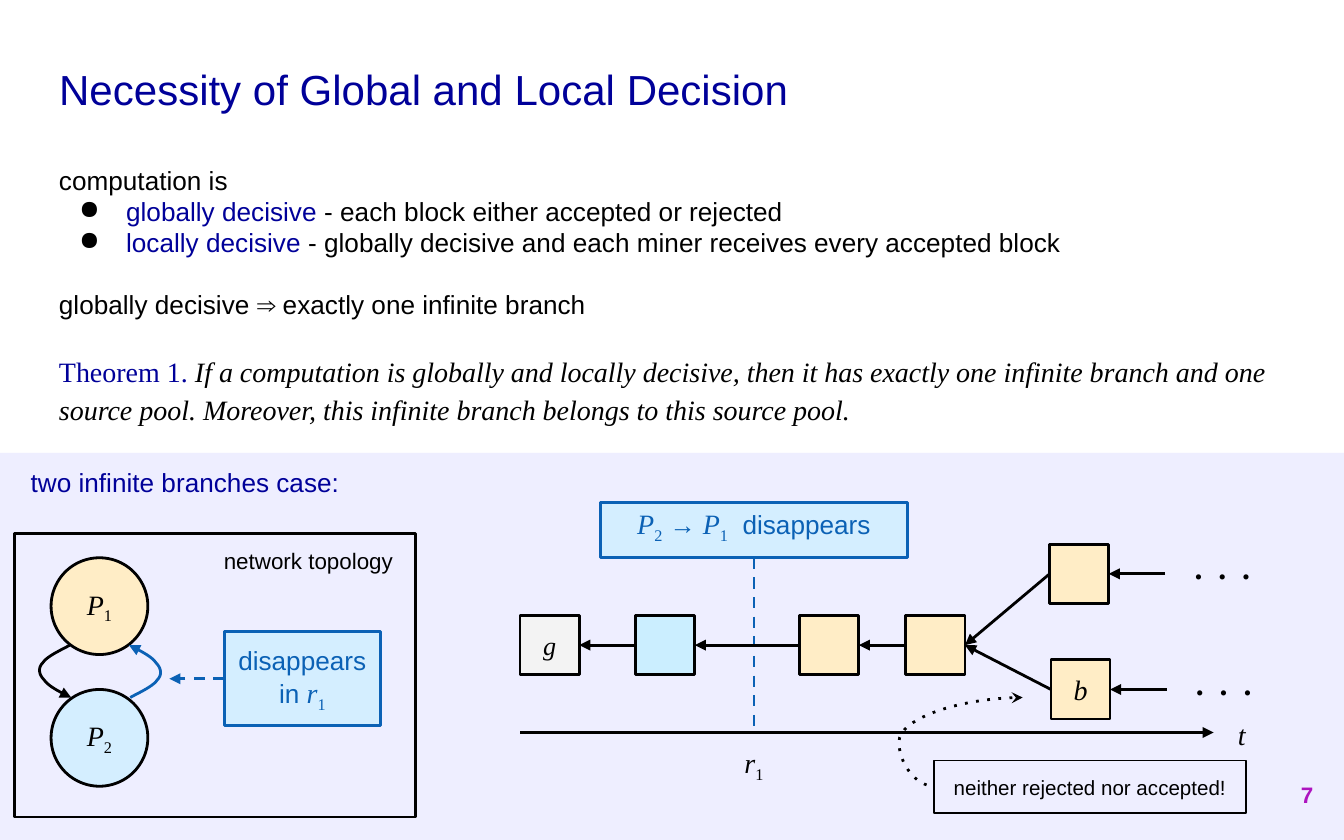
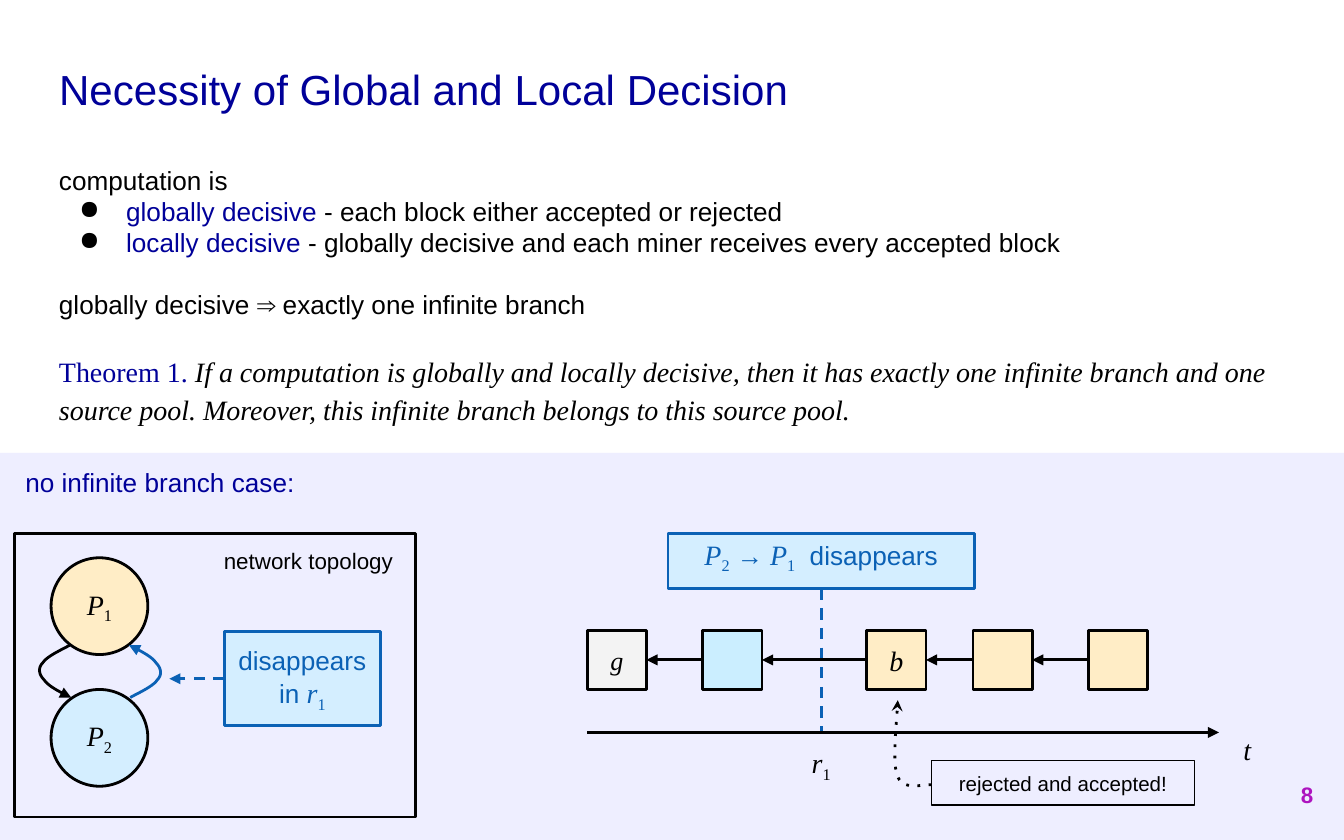
from dataclasses import dataclass

from lxml.etree import SubElement
from pptx import Presentation
from pptx.dml.color import RGBColor
from pptx.enum.shapes import MSO_CONNECTOR, MSO_SHAPE
from pptx.enum.text import MSO_ANCHOR, MSO_AUTO_SIZE, PP_ALIGN
from pptx.oxml.ns import qn
from pptx.util import Inches, Pt

COLORS = {
    "black": "000000", "navy": "000099", "blue": "0B61B5", "purple": "AD13BF",
    "band": "E4E4FF", "sky": "CBEEFF", "cream": "FFEDC6", "gray": "F3F3F3",
}
# font name, italic, baseline
STYLES = {
    "sans": ("Arial", False, None),
    "serif": ("Times New Roman", False, None),
    "math": ("Times New Roman", True, None),
    "sub": ("Times New Roman", False, "-25000"),
}
BLOCK = 0.44
BLOCK_STEPS = (0, 0.86, 2.08, 2.87)
BAND_TOP = 3.37


@dataclass
class Span:
    text: str
    style: str = "sans"
    size: float = 14
    color: str = "black"
    bold: bool = False


def rgb(name):
    return RGBColor.from_string(COLORS[name])


def symbol(letter, index="", color="black", size=15):
    """Spans of an italic letter with an optional lower index."""
    spans = [Span(letter, "math", size, color)]
    if index:
        spans.append(Span(index, "sub", size, color))
    return spans


def format_run(run, span):
    name, italic, baseline = STYLES[span.style]
    run.font.name = name
    run.font.size = Pt(span.size)
    run.font.italic = italic
    run.font.bold = span.bold
    run.font.color.rgb = rgb(span.color)
    if baseline:
        run._r.get_or_add_rPr().set("baseline", baseline)


def write(box, lines, align=PP_ALIGN.CENTER, anchor=MSO_ANCHOR.MIDDLE):
    """Fill a box with lines, each a list of spans."""
    frame = box.text_frame
    frame.word_wrap = True
    frame.auto_size = MSO_AUTO_SIZE.NONE
    frame.vertical_anchor = anchor
    frame.margin_left = frame.margin_right = Inches(0.1)
    frame.margin_top = frame.margin_bottom = Inches(0.1)
    for number, spans in enumerate(lines):
        paragraph = frame.add_paragraph() if number else frame.paragraphs[0]
        paragraph.alignment = align
        for span in spans:
            run = paragraph.add_run()
            run.text = span.text
            format_run(run, span)


def add_text(page, left, top, width, height, lines, align=PP_ALIGN.CENTER,
             anchor=MSO_ANCHOR.TOP):
    box = page.shapes.add_textbox(Inches(left), Inches(top), Inches(width), Inches(height))
    write(box, lines, align, anchor)
    return box


def set_line(shape, color="black", width=1.5, dash=None, head=None, tail=None):
    shape.line.color.rgb = rgb(color)
    shape.line.width = Pt(width)
    line = shape.line._get_or_add_ln()
    if dash:
        SubElement(line, qn("a:prstDash"), val=dash)
    if head:
        SubElement(line, qn("a:headEnd"), type=head)
    if tail:
        SubElement(line, qn("a:tailEnd"), type=tail)


def add_box(page, left, top, width, height, fill=None, alpha=None, line="black",
            line_width=1.5, lines=(), kind=MSO_SHAPE.RECTANGLE, anchor=MSO_ANCHOR.MIDDLE):
    box = page.shapes.add_shape(kind, Inches(left), Inches(top), Inches(width), Inches(height))
    box.shadow.inherit = False
    if fill:
        box.fill.solid()
        box.fill.fore_color.rgb = rgb(fill)
        if alpha:
            color = box._element.spPr.find(qn("a:solidFill")).find(qn("a:srgbClr"))
            SubElement(color, qn("a:alpha"), val=str(alpha * 1000))
    else:
        box.fill.background()
    if line:
        set_line(box, line, line_width)
    else:
        box.line.fill.background()
    write(box, lines, anchor=anchor)
    return box


def add_line(page, start, end, kind=MSO_CONNECTOR.STRAIGHT, **line_format):
    """Join two ends, each an (x, y) point or a (shape, site) pair."""
    joined = [not isinstance(place[0], (int, float)) for place in (start, end)]
    points = [(0, 0) if is_joined else place
              for is_joined, place in zip(joined, (start, end))]
    line = page.shapes.add_connector(kind, *(Inches(value) for point in points for value in point))
    if joined[0]:
        line.begin_connect(*start)
    if joined[1]:
        line.end_connect(*end)
    set_line(line, **line_format)
    SubElement(line._element.spPr, qn("a:effectLst"))
    return line


def add_curve(page, left, top, points, **line_format):
    """Draw a chain of cubic curves, whose points are relative to left and top."""
    steps = 12
    trace = [points[0]]
    for first in range(0, len(points) - 1, 3):
        corners = points[first:first + 4]
        for step in range(1, steps + 1):
            t = step / steps
            weights = ((1 - t) ** 3, 3 * t * (1 - t) ** 2, 3 * t ** 2 * (1 - t), t ** 3)
            trace.append(tuple(sum(weight * corner[axis] for weight, corner in zip(weights, corners))
                               for axis in (0, 1)))
    places = [(Inches(left + x), Inches(top + y)) for x, y in trace]
    builder = page.shapes.build_freeform(*places[0])
    builder.add_line_segments(places[1:], close=False)
    curve = builder.convert_to_shape()
    curve.shadow.inherit = False
    curve.fill.background()
    set_line(curve, **line_format)


def add_title(page, text):
    title = page.shapes.title
    title.left, title.top = Inches(0.34), Inches(0.31)
    title.width, title.height = Inches(9.32), Inches(0.7)
    write(title, [[Span(text, size=22.5, color="navy")]], PP_ALIGN.LEFT)


def add_claims(page, left, top):
    lines = [
        [Span("computation is")],
        [Span("globally decisive", color="navy"),
         Span(" - each block either accepted or rejected")],
        [Span("locally decisive", color="navy"),
         Span(" - globally decisive and each miner receives every accepted block")],
        [Span("globally decisive ⇒ exactly one infinite branch")],
        [Span("Theorem 1. ", "serif", 15, "navy"),
         Span("If a computation is globally and locally decisive, then it has exactly one "
              "infinite branch and one source pool. Moreover, this infinite branch belongs "
              "to this source pool.", "math", 15)],
    ]
    box = add_text(page, left, top, 9.32, 2.26, lines, PP_ALIGN.LEFT)
    paragraphs = box.text_frame.paragraphs
    for paragraph in paragraphs[1:3]:
        properties = paragraph._p.get_or_add_pPr()
        properties.set("marL", str(Inches(0.5)))
        properties.set("indent", str(Inches(-0.35)))
        bullet_color = SubElement(properties, qn("a:buClr"))
        SubElement(bullet_color, qn("a:srgbClr"), val=COLORS["black"])
        SubElement(properties, qn("a:buChar"), char="●")
    for paragraph in paragraphs[3:]:
        paragraph.space_before = Pt(16)
    paragraphs[-1].line_spacing = 1.15


def add_topology(page, left, top):
    add_box(page, left, top, 2.98, 2.11)
    for index, drop, fill, alpha in (("2", 1.16, "sky", 74), ("1", 0.18, "cream", None)):
        add_box(page, left + 0.27, top + drop, 0.72, 0.72, fill, alpha,
                lines=[symbol("P", index)], kind=MSO_SHAPE.OVAL)
    upward = [(0.86, 1.22), (0.89, 1.2), (1.03, 1.14), (1.06, 1.09), (1.1, 1.05),
              (1.09, 1), (1.05, 0.96), (1.02, 0.91), (0.89, 0.85), (0.85, 0.83)]
    downward = [(1.27 - x, 2.05 - y) for x, y in upward]
    add_curve(page, left, top, upward, color="blue", tail="triangle")
    add_curve(page, left, top, downward, tail="triangle")
    note = add_box(page, left + 1.56, top + 0.73, 1.16, 0.7, "sky", 74, "blue", lines=[
        [Span("disappears", color="blue")],
        [Span("in ", color="blue"), *symbol("r", "1", "blue")],
    ])
    add_line(page, (note, 1), (left + 1.15, top + 1.08), color="blue", dash="dash", tail="triangle")
    add_text(page, left + 1.39, top, 1.59, 0.4, [[Span("network topology", size=12)]])


def add_block(page, left, top, fill="cream", spans=()):
    return add_box(page, left, top, BLOCK, BLOCK, fill, lines=[spans])


def add_arrow_back(page, block, previous):
    add_line(page, (block, 1), (previous, 3), tail="triangle")


def add_chain(page, left, top, note_top, axis_top, axis_length, third_label=()):
    """Draw the blocks over the time axis and return the last block."""
    blocks = []
    fills = ("gray", "sky", "cream", "cream")
    labels = (symbol("g", size=14), (), third_label, ())
    for step, fill, label in zip(BLOCK_STEPS, fills, labels):
        blocks.append(add_block(page, left + step, top, fill, label))
    note = add_box(page, left + 0.6, note_top, 2.28, 0.41, "sky", 74, "blue",
                   anchor=MSO_ANCHOR.BOTTOM, lines=[[
                       *symbol("P", "2", "blue"), Span(" →", color="blue"),
                       *symbol(" P", "1", "blue"), Span("  disappears", color="blue")]])
    add_line(page, (note, 2), (left + 1.74, axis_top), color="blue", dash="dash")
    for previous, block in zip(blocks, blocks[1:]):
        add_arrow_back(page, block, previous)
    axis_end = left + axis_length
    add_line(page, (left, axis_top), (axis_end, axis_top), tail="triangle")
    add_text(page, axis_end, top + 0.66, 0.42, 0.45, [symbol("t")])
    add_text(page, left + 1.52, axis_top, BLOCK, 0.45, [symbol("r", "1")])
    return blocks[-1]


def add_endless_branch(page, left, top, fork, spans=()):
    block = add_block(page, left, top, spans=spans)
    add_arrow_back(page, block, fork)
    middle = top + BLOCK / 2
    add_line(page, (left + 0.86, middle), (block, 3), tail="triangle")
    add_text(page, left + 0.98, middle - 0.22, 0.93, 0.34,
             [[Span(".  .  .", "serif", 17, bold=True)]], PP_ALIGN.LEFT, MSO_ANCHOR.MIDDLE)


def add_callout(page, left, top, width, height, text):
    add_box(page, left, top, width, height, line_width=0.75, lines=[[Span(text, size=11)]])


def start_page(deck, number, case, case_left):
    page = deck.slides.add_slide(deck.slide_layouts[5])
    add_box(page, 0, BAND_TOP, 10, 2.88, "band", 61, line=None)
    add_title(page, "Necessity of Global and Local Decision")
    add_claims(page, 0.34, 1.12)
    add_topology(page, 0.11, 3.97)
    add_text(page, case_left, BAND_TOP, 2.7, 0.44, [[Span(case, color="navy")]], PP_ALIGN.LEFT)
    add_text(page, 9.27, 5.67, 0.6, 0.48, [[Span(number, size=12, color="purple", bold=True)]],
             PP_ALIGN.RIGHT, MSO_ANCHOR.MIDDLE)
    return page


def add_two_branches_page(deck):
    page = start_page(deck, "7", "two infinite branches case:", 0.13)
    fork = add_chain(page, 3.87, 4.58, 3.74, 5.45, 5.16)
    add_endless_branch(page, 7.81, 4.05, fork)
    add_endless_branch(page, 7.82, 4.91, fork, symbol("b"))
    add_callout(page, 6.95, 5.66, 2.32, 0.39, "neither rejected nor accepted!")
    pointer = add_line(page, (7.61, 5.19), (6.95, 5.85), MSO_CONNECTOR.CURVE,
                       dash="dot", head="stealth")
    geometry = pointer._element.spPr.find(qn("a:prstGeom"))
    bends = geometry.find(qn("a:avLst"))
    if bends is None:
        bends = SubElement(geometry, qn("a:avLst"))
    SubElement(bends, qn("a:gd"), name="adj1", fmla="val 139500")


def add_no_branch_page(deck):
    page = start_page(deck, "8", "no infinite branch case:", 0.09)
    left, top = 4.37, 4.69
    previous = add_chain(page, left, top, 3.97, 5.45, 4.7, symbol("b"))
    add_arrow_back(page, add_block(page, left + 3.73, top), previous)
    add_callout(page, 6.93, 5.66, 1.96, 0.33, "rejected and accepted!")
    add_curve(page, 6.93, 5.66, [(0, 0.18), (-0.04, 0.17), (-0.21, 0.23), (-0.25, 0.12),
                                 (-0.3, 0.02), (-0.25, -0.36), (-0.25, -0.45)],
              dash="dot", tail="stealth")


def main():
    deck = Presentation()
    deck.slide_width, deck.slide_height = Inches(10), Inches(6.25)
    add_two_branches_page(deck)
    add_no_branch_page(deck)
    deck.save("out.pptx")


if __name__ == "__main__":
    main()
